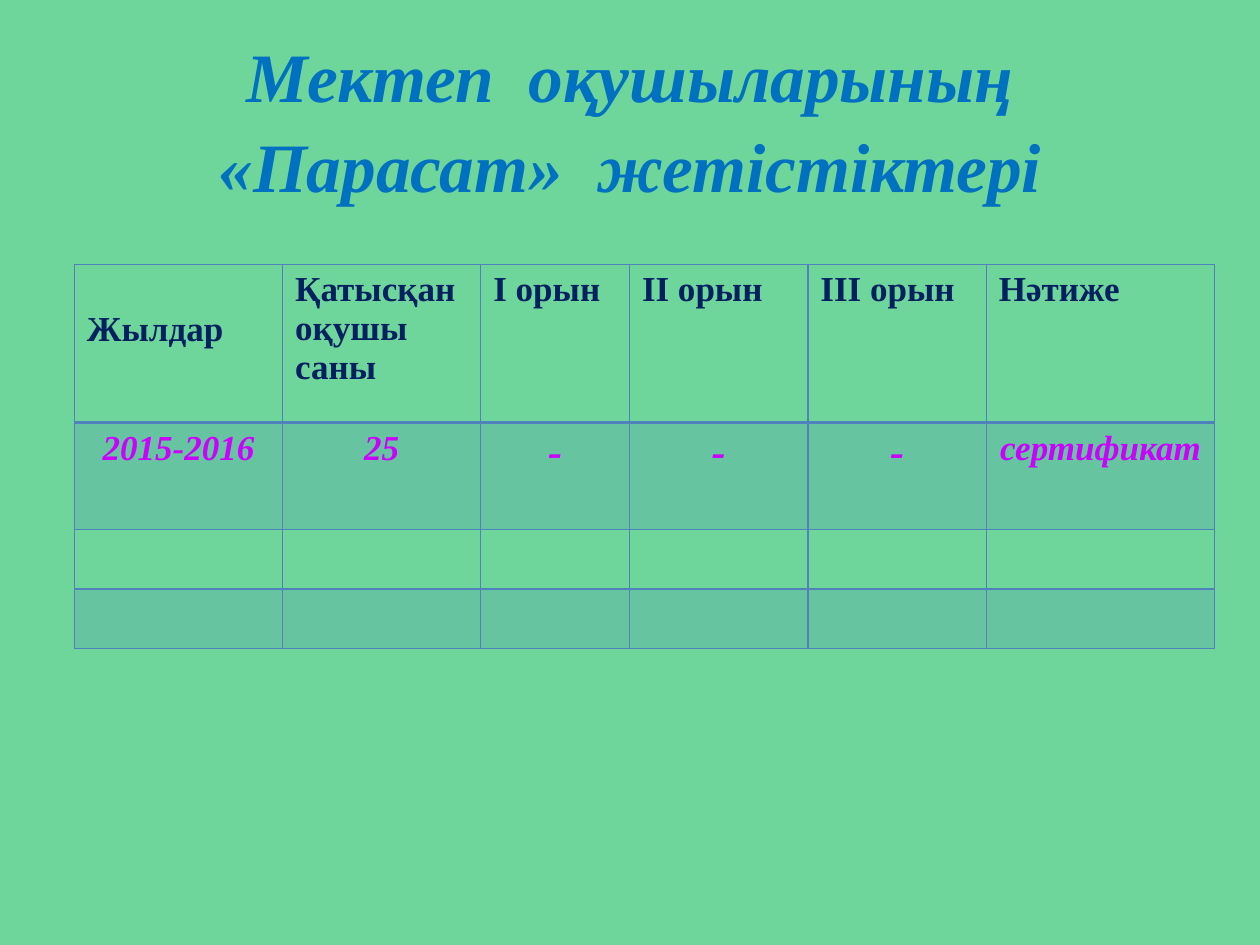
from lxml.etree import SubElement
from pptx import Presentation
from pptx.dml.color import RGBColor
from pptx.enum.text import MSO_ANCHOR, MSO_AUTO_SIZE, PP_ALIGN
from pptx.oxml.ns import qn
from pptx.util import Pt

BACKGROUND = "6ED59B"
TITLE_BLUE = "0070C0"
NAVY = "002060"
MAGENTA = "CC00FF"
GRID_BLUE = "4F81BD"


def paint(color_format, value):
    color_format.rgb = RGBColor.from_string(value)


def write(frame, text, size=20, color=NAVY, italic=False, align=PP_ALIGN.LEFT, spacing=None):
    paragraph = frame.paragraphs[0]
    paragraph.alignment = align
    paragraph.line_spacing = spacing
    run = paragraph.add_run()
    run.text = text
    run.font.name = "Times New Roman"
    run.font.size = Pt(size)
    run.font.bold = True
    run.font.italic = italic
    paint(run.font.color, color)


class Deck:
    def __init__(self, width, height):
        self.presentation = Presentation()
        self.presentation.slide_width = Pt(width)
        self.presentation.slide_height = Pt(height)
        self.slide = self.presentation.slides.add_slide(self.presentation.slide_layouts[5])
        fill = self.slide.background.fill
        fill.solid()
        paint(fill.fore_color, BACKGROUND)

    def title(self, text, left, top, width, height):
        heading = self.slide.shapes.title
        heading.left, heading.top = Pt(left), Pt(top)
        heading.width, heading.height = Pt(width), Pt(height)
        frame = heading.text_frame
        frame.word_wrap = True
        frame.auto_size = MSO_AUTO_SIZE.NONE
        frame.vertical_anchor = MSO_ANCHOR.MIDDLE
        write(frame, text, size=39.6, color=TITLE_BLUE, italic=True,
              align=PP_ALIGN.CENTER, spacing=1.08)

    def table(self, left, top, widths, heights):
        grid = self.slide.shapes.add_table(
            len(heights), len(widths), Pt(left), Pt(top), Pt(sum(widths)), Pt(sum(heights))
        ).table
        for column, width in zip(grid.columns, widths):
            column.width = Pt(width)
        for row, height in zip(grid.rows, heights):
            row.height = Pt(height)
        for row_index, row in enumerate(grid.rows):
            for cell in row.cells:
                self.borders(cell, top=2 if row_index == 1 else 1,
                             bottom=2 if row_index == 0 else 1)
                self.shade(cell, banded=row_index % 2 == 1)
        return grid

    def borders(self, cell, top, bottom):
        properties = cell._tc.get_or_add_tcPr()
        for tag, weight in (("a:lnL", 1), ("a:lnR", 1), ("a:lnT", top), ("a:lnB", bottom)):
            line = SubElement(properties, qn(tag), w=str(Pt(weight)))
            solid = SubElement(line, qn("a:solidFill"))
            SubElement(solid, qn("a:srgbClr"), val=GRID_BLUE)

    def shade(self, cell, banded):
        if not banded:
            cell.fill.background()
            return
        cell.fill.solid()
        paint(cell.fill.fore_color, GRID_BLUE)
        color = cell._tc.tcPr.find(qn("a:solidFill")).find(qn("a:srgbClr"))
        SubElement(color, qn("a:alpha"), val="20000")


def main():
    deck = Deck(720, 540)
    deck.title("Мектеп  оқушыларының «Парасат»  жетістіктері", 36, 21.6, 648, 90)
    results = deck.table(42.5, 151, [119, 113.2, 85, 102, 102, 130.5], [90.5, 61.2, 34, 34])

    headers = ["Жылдар", "Қатысқан  оқушы  саны", "І орын", "ІІ орын", "ІІІ орын", "Нәтиже"]
    for cell, header in zip(results.rows[0].cells, headers):
        write(cell.text_frame, header)
    results.cell(0, 0).margin_top = Pt(26)

    season = ["2015-2016", "25", "-", "-", "-", "сертификат"]
    for cell, value in zip(results.rows[1].cells, season):
        write(cell.text_frame, value, size=24 if value == "-" else 20,
              color=MAGENTA, italic=True, align=PP_ALIGN.CENTER)

    deck.presentation.save("out.pptx")


if __name__ == "__main__":
    main()
